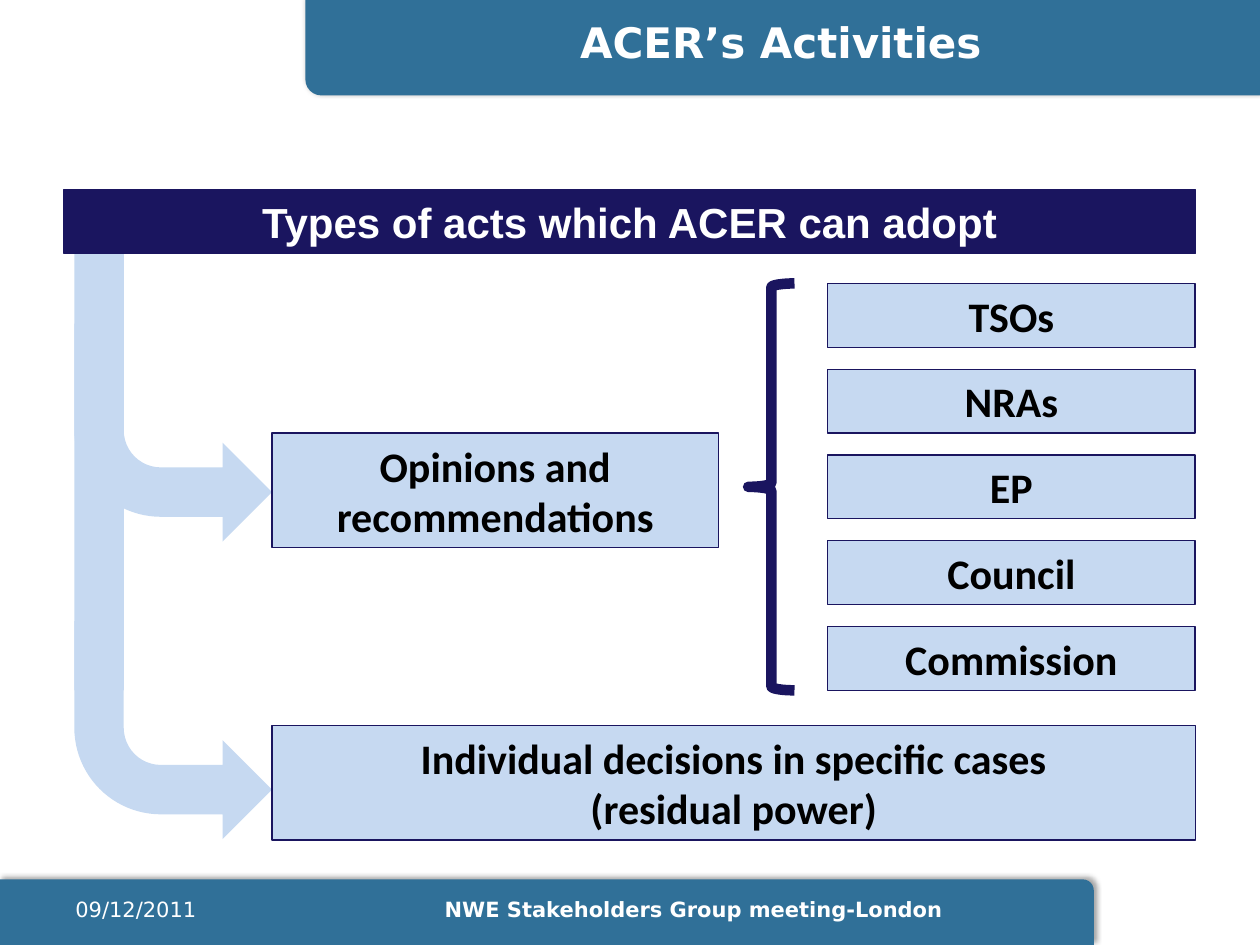
from lxml.etree import SubElement
from pptx import Presentation
from pptx.dml.color import RGBColor
from pptx.enum.shapes import MSO_SHAPE as Shape
from pptx.enum.text import MSO_ANCHOR as Anchor, MSO_AUTO_SIZE as AutoSize, PP_ALIGN as Align
from pptx.oxml.ns import qn
from pptx.util import Pt

TEAL = RGBColor(0x30, 0x70, 0x98)
NAVY = RGBColor(0x1A, 0x15, 0x5F)
PALE = RGBColor(0xC6, 0xD9, 0xF1)
WHITE = RGBColor(0xFF, 0xFF, 0xFF)
BLACK = RGBColor(0x00, 0x00, 0x00)
ADDRESSEES = ["TSOs", "NRAs", "EP", "Council", "Commission"]


def place(part, box):
    part.left, part.top, part.width, part.height = (Pt(length) for length in box)


def write(part, text, font, size, color, bold=True, align=Align.CENTER):
    frame = part.text_frame
    frame.text = text
    frame.word_wrap = True
    for para in frame.paragraphs:
        para.alignment = align
        for span in para.runs:
            span.font.name = font
            span.font.size = Pt(size)
            span.font.bold = bold
            span.font.color.rgb = color


def add_part(page, kind, box, fill=None, line=None, weight=0.75):
    part = page.shapes.add_shape(kind, *(Pt(length) for length in box))
    part.shadow.inherit = False
    if fill is None:
        part.fill.background()
    else:
        part.fill.solid()
        part.fill.fore_color.rgb = fill
    if line is None:
        part.line.fill.background()
    else:
        part.line.color.rgb = line
        part.line.width = Pt(weight)
    return part


def add_bar(page, box, rotation=0):
    bar = add_part(page, Shape.ROUND_1_RECTANGLE, box, TEAL)
    bar.rotation = rotation
    effects = bar._element.spPr.find(qn("a:effectLst"))
    shadow = SubElement(effects, qn("a:outerShdw"), blurRad=str(Pt(3.1)), dist=str(Pt(1.8)),
                        dir=str(306 * 60000), rotWithShape="0")
    color = SubElement(shadow, qn("a:srgbClr"), val="000000")
    SubElement(color, qn("a:alpha"), val="35000")


def add_label(page, box, text, font="Calibri", fill=PALE, color=BLACK):
    label = add_part(page, Shape.RECTANGLE, box, fill, NAVY)
    write(label, text, font, 24, color)
    label.text_frame.vertical_anchor = Anchor.MIDDLE
    label.text_frame.auto_size = AutoSize.SHAPE_TO_FIT_TEXT


def add_header(page, box):
    left, top, width, height = box
    add_bar(page, box, rotation=180)
    title = page.shapes.title
    place(title, (left + 9, top + 5, width - 20, 38))
    write(title, "ACER’s Activities", "DejaVu Sans", 24, WHITE)
    title.text_frame.vertical_anchor = Anchor.MIDDLE
    page.shapes._spTree.append(title._element)  # bring in front of the bar


def add_footer(page, box):
    left, top, width, height = box
    add_bar(page, box)
    notes = [(36, 168, "09/12/2011", False),
             (247, 330, "NWE Stakeholders Group meeting-London", True)]
    for offset, note_width, text, bold in notes:
        note = page.shapes.add_textbox(Pt(left + offset), Pt(top + 6), Pt(note_width), Pt(29))
        write(note, text, "DejaVu Sans", 12, WHITE, bold, Align.LEFT)


def add_branches(page, box, arrow_tops, arrow_height=124.5):
    left, top, width, height = box
    add_part(page, Shape.RECTANGLE, (left, top, 28.25, height), PALE)
    for arrow_top in arrow_tops:
        arrow = add_part(page, Shape.BENT_ARROW, (left, arrow_top, width, arrow_height), PALE)
        arrow.adjustments[3] = 0.438
        arrow._element.spPr.xfrm.set("flipV", "1")


def add_addressees(page, box):
    left, top, width, height = box
    add_part(page, Shape.LEFT_BRACE, (left, top, 26.5, height), line=NAVY, weight=6)
    label_height = 36.5
    pitch = (height - label_height) / (len(ADDRESSEES) - 1)
    for row, name in enumerate(ADDRESSEES):
        add_label(page, (left + 45.5, top + row * pitch, width - 45.5, label_height), name)


def add_acts(page, box):
    left, top, width, height = box
    add_branches(page, (left + 6, top + 20, 113, 266), (top + 76.5, top + 246.5))
    add_label(page, (left, top, width, 36.5), "Types of acts which ACER can adopt",
              "Arial", NAVY, WHITE)
    # The two kinds of act, each at the tip of an arrow
    add_label(page, (left + 119, top + 139, 255, 65.5), "Opinions and recommendations")
    add_label(page, (left + 119, top + height - 65.5, width - 119, 65.5),
              "Individual decisions in specific cases\v(residual power)")
    add_addressees(page, (left + 391, top + 53.5, width - 391, 232.5))


def main():
    deck = Presentation()
    deck.slide_width, deck.slide_height = Pt(720), Pt(540)
    page = deck.slides.add_slide(deck.slide_layouts[5])
    add_footer(page, (0, 502.5, 625, 37.5))
    add_header(page, (174.5, 0, 545.5, 54.5))
    add_acts(page, (36.5, 108.5, 646.5, 371.5))
    deck.save("out.pptx")


if __name__ == "__main__":
    main()
